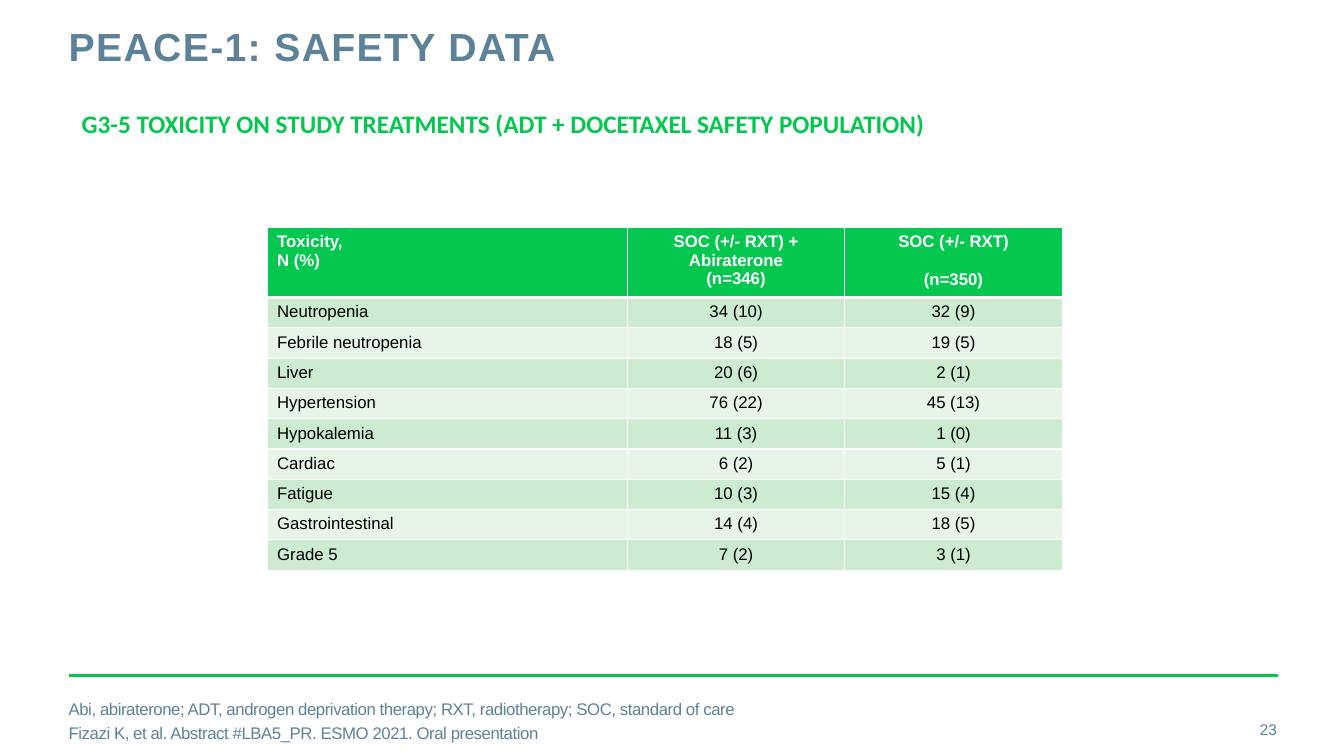
from lxml.etree import SubElement
from pptx import Presentation
from pptx.dml.color import RGBColor
from pptx.enum.shapes import MSO_CONNECTOR
from pptx.enum.text import MSO_ANCHOR, PP_ALIGN
from pptx.oxml import parse_xml
from pptx.oxml.ns import nsdecls, qn
from pptx.util import Cm, Pt

COLORS = {
    "green": "03C74F",
    "slate": "5D8298",
    "white": "FFFFFF",
    "black": "000000",
    "mint": "CCEBD0",
    "pale": "E7F5E9",
}
HEADS = [
    ["Toxicity,", "N (%)"],
    ["SOC (+/- RXT) + Abiraterone", "(n=346)"],
    ["SOC (+/- RXT)", "(n=350)"],
]
ROWS = [
    ("Neutropenia", "34 (10)", "32 (9)"),
    ("Febrile neutropenia", "18 (5)", "19 (5)"),
    ("Liver", "20 (6)", "2 (1)"),
    ("Hypertension", "76 (22)", "45 (13)"),
    ("Hypokalemia", "11 (3)", "1 (0)"),
    ("Cardiac", "6 (2)", "5 (1)"),
    ("Fatigue", "10 (3)", "15 (4)"),
    ("Gastrointestinal", "14 (4)", "18 (5)"),
    ("Grade 5", "7 (2)", "3 (1)"),
]
NOTES = [
    "Abi, abiraterone; ADT, androgen deprivation therapy; RXT, radiotherapy; SOC, standard of care",
    "Fizazi K, et al. Abstract #LBA5_PR. ESMO 2021. Oral presentation",
]
WIDTHS = [9.08, 5.48, 5.48]


def color(name):
    return RGBColor.from_string(COLORS[name])


def add_lines(frame, lines, size, tint, bold=False, face="Arial",
              align=PP_ALIGN.LEFT, gap=0, track=0):
    for num, line in enumerate(lines):
        para = frame.add_paragraph() if num else frame.paragraphs[0]
        para.alignment = align
        if num and gap:
            para.space_before = Pt(gap)
        run = para.add_run()
        run.text = line
        run.font.size = Pt(size)
        run.font.name = face
        run.font.bold = bold
        run.font.color.rgb = color(tint)
        if track:
            run.font._element.set("spc", str(track))


def add_text(slide, place, lines, size, tint, anchor=MSO_ANCHOR.TOP, **style):
    box = slide.shapes.add_textbox(*[Cm(n) for n in place])
    frame = box.text_frame
    frame.word_wrap = True
    frame.vertical_anchor = anchor
    frame.margin_left = frame.margin_right = 0
    frame.margin_top = frame.margin_bottom = 0
    add_lines(frame, lines, size, tint, **style)
    return frame


def add_rule(slide, left, right, top):
    rule = slide.shapes.add_connector(
        MSO_CONNECTOR.STRAIGHT, Cm(left), Cm(top), Cm(right), Cm(top))
    rule.line.color.rgb = color("green")
    rule.line.width = Pt(2)
    SubElement(rule._element.spPr, qn("a:effectLst"))


def set_edges(cell, top=1, base=1):
    props = cell._tc.get_or_add_tcPr()
    for num, (side, width) in enumerate(zip("LRTB", (1, 1, top, base))):
        props.insert(num, parse_xml(
            f'<a:ln{side} {nsdecls("a")} w="{Pt(width)}"><a:solidFill>'
            f'<a:srgbClr val="{COLORS["white"]}"/></a:solidFill></a:ln{side}>'))


def fill_cell(cell, col, lines, fill, tint, bold=False, gap=0, **edges):
    cell.fill.solid()
    cell.fill.fore_color.rgb = color(fill)
    set_edges(cell, **edges)
    align = PP_ALIGN.CENTER if col else PP_ALIGN.LEFT
    add_lines(cell.text_frame, lines, 12, tint, bold, align=align, gap=gap)


def add_grid(slide, left, top):
    head, step = 1.66, 0.73
    frame = slide.shapes.add_table(
        len(ROWS) + 1, len(WIDTHS), Cm(left), Cm(top),
        Cm(sum(WIDTHS)), Cm(head + step * len(ROWS)))
    table = frame.table
    for col, width in enumerate(WIDTHS):
        table.columns[col].width = Cm(width)
    table.rows[0].height = Cm(head)
    for col, lines in enumerate(HEADS):
        fill_cell(table.cell(0, col), col, lines, "green", "white",
                  bold=True, gap=13.8 if col == 2 else 0, base=3)
    for num, row in enumerate(ROWS, 1):
        table.rows[num].height = Cm(step)
        fill = "mint" if num % 2 else "pale"
        for col, text in enumerate(row):
            fill_cell(table.cell(num, col), col, [text], fill, "black",
                      top=3 if num == 1 else 1)


def main():
    deck = Presentation()
    deck.slide_width, deck.slide_height = Cm(33.87), Cm(19.05)
    slide = deck.slides.add_slide(deck.slide_layouts[6])
    add_rule(slide, 1.73, 32.21, 17.02)
    add_text(slide, (30, 17.86, 2.18, 1.02), ["23"], 11, "slate",
             MSO_ANCHOR.MIDDLE, align=PP_ALIGN.RIGHT)
    title = add_text(slide, (1.73, 0.69, 24.28, 1.75),
                     ["PEACE-1: SAFETY DATA"], 28, "slate", bold=True, track=100)
    title.paragraphs[0].line_spacing = Pt(30)
    add_text(slide, (1.73, 17.65, 22.56, 1.02), NOTES, 12, "slate",
             MSO_ANCHOR.MIDDLE, gap=3, track=-30)
    add_grid(slide, 6.73, 5.72)
    add_text(slide, (2.06, 2.74, 24, 0.76),
             ["G3-5 TOXICITY ON STUDY TREATMENTS (ADT + DOCETAXEL SAFETY POPULATION)"],
             18, "green", bold=True, face="Calibri")
    deck.save("out.pptx")


if __name__ == "__main__":
    main()
